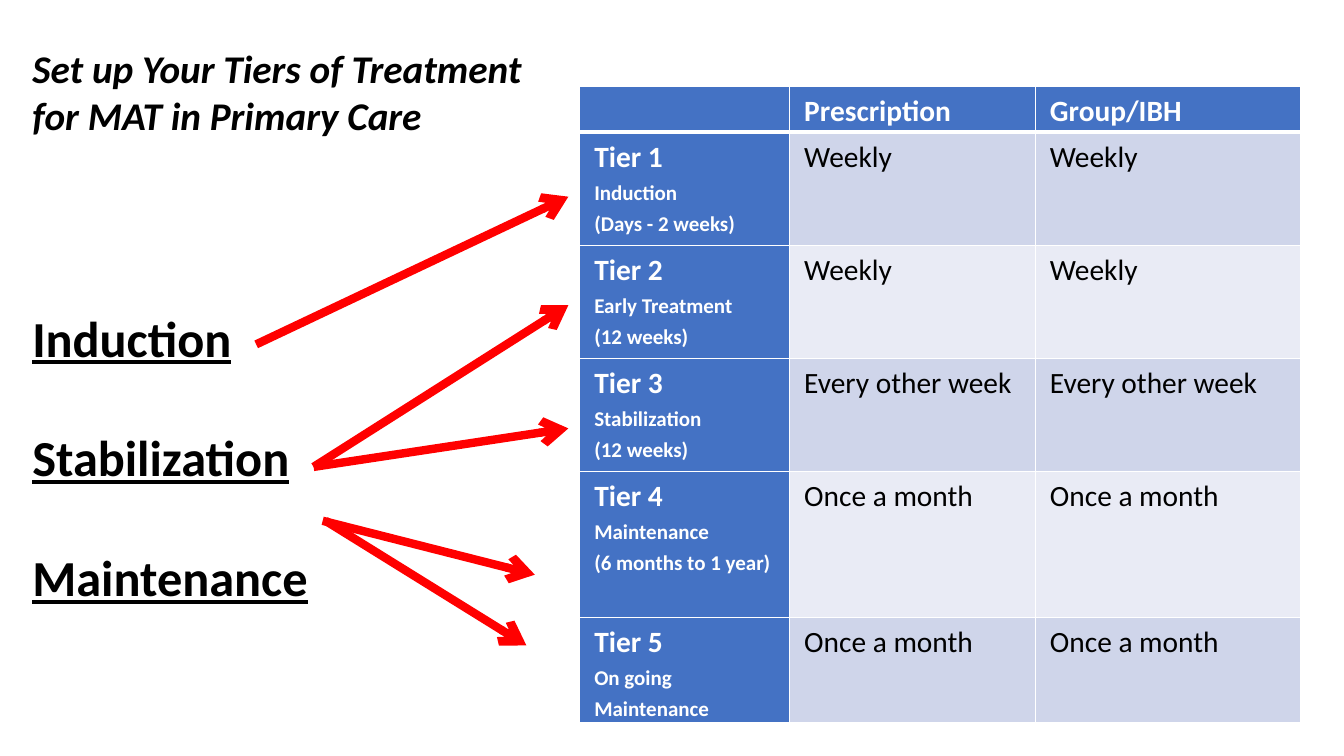
"""Build the slide on tiers of treatment for MAT in primary care."""
from lxml import etree
from pptx import Presentation
from pptx.dml.color import RGBColor
from pptx.enum.shapes import MSO_CONNECTOR
from pptx.enum.text import MSO_ANCHOR, MSO_AUTO_SIZE, PP_ALIGN
from pptx.oxml.ns import qn
from pptx.util import Pt

STRAIGHT = MSO_CONNECTOR.STRAIGHT
TOP = MSO_ANCHOR.TOP
NO_FIT = MSO_AUTO_SIZE.NONE
LEFT = PP_ALIGN.LEFT
TITLE_ONLY = 5

COLORS = {
    "ink": "000000",
    "white": "FFFFFF",
    "blue": "4472C4",
    "band_dark": "CFD5EA",
    "band_light": "E9EBF5",
    "arrow": "FF0000",
}
FORMATS = {
    "title": {"size": Pt(28), "bold": True, "italic": True},
    "stage": {"size": Pt(36), "bold": True, "underline": True},
    "heading": {"size": Pt(21), "bold": True},
    "detail": {"size": Pt(15), "bold": True},
    "frequency": {"size": Pt(21), "bold": False},
}

TITLE = "Set up Your Tiers of Treatment for MAT in Primary Care"
STAGES = ["Induction", "Stabilization", "Maintenance"]
ARROWS = [
    ((183, 246), (406, 140.5)),
    ((224, 333.5), (406, 218)),
    ((224, 333.5), (406, 306)),
    ((232.5, 372), (376, 461)),
    ((230.5, 372), (382, 410.5)),
]
COLUMN_WIDTHS = [150, 175.5, 189.5]
ROW_HEIGHTS = [33, 80.75, 80.75, 80.75, 104.5, 72]
SCHEDULE = [
    ([], ["Prescription"], ["Group/IBH"]),
    (["Tier 1", "Induction", "(Days - 2 weeks)"], ["Weekly"], ["Weekly"]),
    (["Tier 2", "Early Treatment", "(12 weeks)"], ["Weekly"], ["Weekly"]),
    (["Tier 3", "Stabilization", "(12 weeks)"], ["Every other week"], ["Every other week"]),
    (["Tier 4", "Maintenance", "(6 months to 1 year)"], ["Once a month"], ["Once a month"]),
    (["Tier 5", "On going Maintenance"], ["Once a month"], ["Once a month"]),
]


class SlideBuilder:
    """Hold the style and the current slide, and add elements to it."""

    def __init__(self, slide, font_name, colors, formats):
        """Keep the slide and its style."""
        self.slide = slide
        self.font_name = font_name
        self.colors = colors
        self.formats = formats

    def add_lines(self, frame, lines, styles, color, spacing=None, gap=0):
        """Add each line as a paragraph in its style."""
        for index, (line, style) in enumerate(zip(lines, styles)):
            paragraph = frame.add_paragraph() if index else frame.paragraphs[0]
            paragraph.alignment = LEFT
            if spacing:
                paragraph.line_spacing = spacing
            if index and gap:
                paragraph.space_before = Pt(gap)
            run = paragraph.add_run()
            run.text = line
            run.font.name = self.font_name
            run.font.color.rgb = RGBColor.from_string(self.colors[color])
            for name, value in self.formats[style].items():
                setattr(run.font, name, value)

    def title(self, text, left, top, width, height):
        """Place and fill the title placeholder."""
        heading = self.slide.shapes.title
        place = {"left": left, "top": top, "width": width, "height": height}
        for name, value in place.items():
            setattr(heading, name, Pt(value))
        frame = heading.text_frame
        layout = {"word_wrap": True, "auto_size": NO_FIT, "vertical_anchor": TOP}
        for name, value in layout.items():
            setattr(frame, name, value)
        self.add_lines(frame, [text], ["title"], "ink")

    def stages(self, names, left, top, width, height, gap):
        """Add the list of treatment stages."""
        box = self.slide.shapes.add_textbox(Pt(left), Pt(top), Pt(width), Pt(height))
        box.text_frame.word_wrap = True
        self.add_lines(box.text_frame, names, ["stage"] * len(names), "ink", gap=gap)

    def arrow(self, start, end):
        """Add a straight arrow from start to end."""
        arrow = self.slide.shapes.add_connector(STRAIGHT, *map(Pt, start + end))
        arrow.line.width = Pt(6)
        arrow.line.color.rgb = RGBColor.from_string(self.colors["arrow"])
        properties = arrow._element.spPr
        etree.SubElement(properties.find(qn("a:ln")), qn("a:tailEnd"), type="arrow")
        etree.SubElement(properties, qn("a:effectLst"))

    def borders(self, cell, widths):
        """Draw white borders of the given widths around a cell."""
        properties = cell._tc.get_or_add_tcPr()
        for side, width in widths.items():
            border = etree.SubElement(properties, qn(f"a:ln{side}"), w=str(Pt(width)))
            fill = etree.SubElement(border, qn("a:solidFill"))
            etree.SubElement(fill, qn("a:srgbClr"), val=self.colors["white"])

    def cell(self, cell, lines, row, column):
        """Fill, border and label one cell of the schedule."""
        margins = {"margin_left": 10.5, "margin_right": 10.5, "margin_top": 0, "margin_bottom": 0}
        for name, value in margins.items():
            setattr(cell, name, Pt(value))
        self.borders(cell, {"L": 1, "R": 1, "T": 3 if row == 1 else 1, "B": 3 if row == 0 else 1})
        is_header = row == 0 or column == 0
        band = "band_dark" if row % 2 else "band_light"
        cell.fill.solid()
        cell.fill.fore_color.rgb = RGBColor.from_string(self.colors["blue" if is_header else band])
        styles = ["heading", "detail", "detail"] if is_header else ["frequency"]
        self.add_lines(cell.text_frame, lines, styles, "white" if is_header else "ink", spacing=1.2)

    def table(self, rows, left, top, widths, heights):
        """Add the schedule table."""
        table = self.slide.shapes.add_table(
            len(heights), len(widths), Pt(left), Pt(top), Pt(sum(widths)), Pt(sum(heights))
        ).table
        for column, width in zip(table.columns, widths):
            column.width = Pt(width)
        for row, height in zip(table.rows, heights):
            row.height = Pt(height)
        for row, contents in enumerate(rows):
            for column, lines in enumerate(contents):
                self.cell(table.cell(row, column), lines, row, column)


def main():
    """Build and save the slide."""
    deck = Presentation()
    deck.slide_width, deck.slide_height = Pt(960), Pt(540)
    slide = deck.slides.add_slide(deck.slide_layouts[TITLE_ONLY])
    builder = SlideBuilder(slide, "Calibri", COLORS, FORMATS)
    builder.table(SCHEDULE, 414, 61.5, COLUMN_WIDTHS, ROW_HEIGHTS)
    builder.stages(STAGES, 16, 215.5, 235, 225, gap=42.5)
    for start, end in ARROWS:
        builder.arrow(start, end)
    builder.title(TITLE, 16, 28, 381, 75)
    deck.save("out.pptx")


if __name__ == "__main__":
    main()
